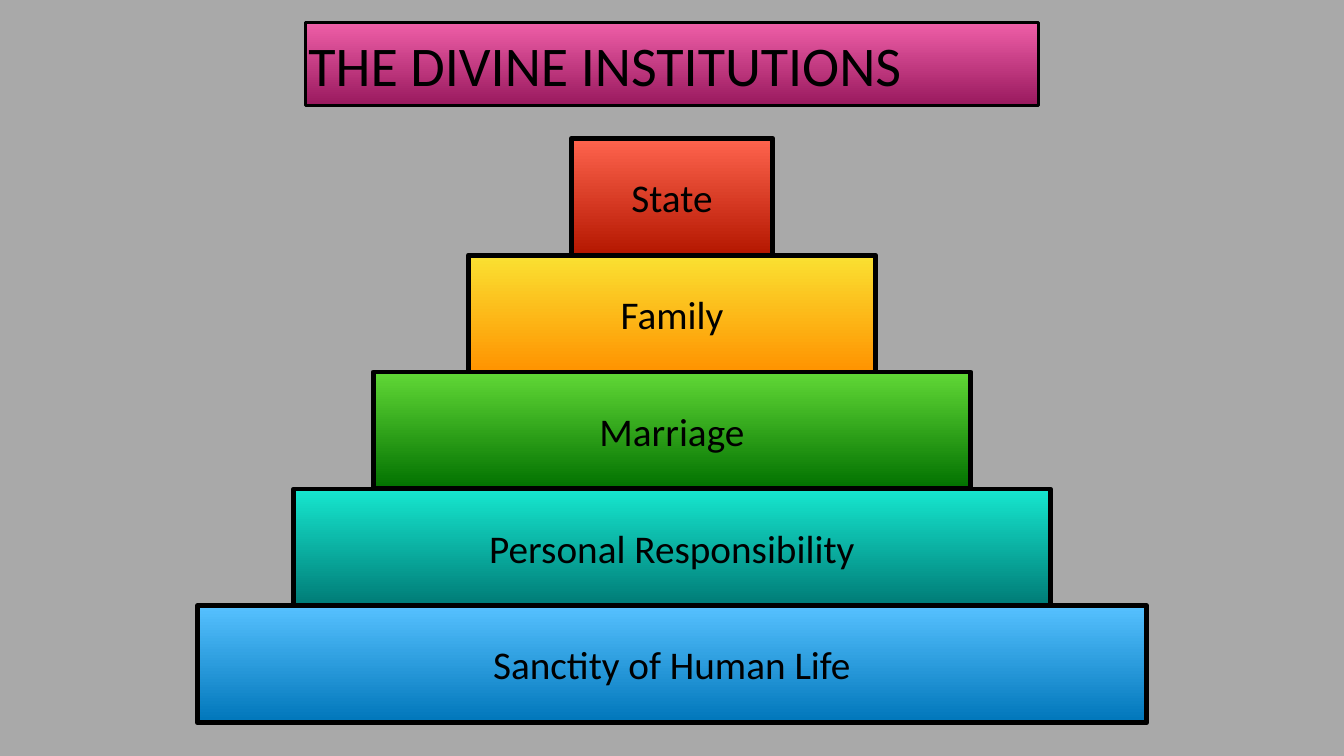
from pptx import Presentation
from pptx.dml.color import RGBColor
from pptx.enum.shapes import MSO_SHAPE
from pptx.enum.text import MSO_ANCHOR, MSO_AUTO_SIZE, PP_ALIGN
from pptx.util import Pt

COLORS = {
    "background": "A9A9A9",
    "ink": "000000",
    "title": ("EF5FA8", "99195E"),
    "blue": ("56C1FF", "0076BA"),
    "teal": ("16E7CF", "007B76"),
    "green": ("61D836", "017100"),
    "yellow": ("FAE132", "FF9300"),
    "red": ("FF644E", "B41700"),
}
SLIDE_WIDTH, SLIDE_HEIGHT = 1920, 1080
CENTER = SLIDE_WIDTH / 2
STEP_HEIGHT = 167
LABEL_HEIGHT = 93
BASE_TOP = 865.5

# Text, colour, step width and label width, from the base up
STEPS = [
    ("Sanctity of Human Life", "blue", 1356, 772),
    ("Personal Responsibility", "teal", 1081, 798),
    ("Marriage", "green", 854, 315),
    ("Family", "yellow", 582, 233),
    ("State", "red", 288, 191),
]


class SlideBuilder:
    font = "Calibri"
    inset = 4
    space_before = 33

    def __init__(self, slide):
        self.slide = slide
        self.pyramid = slide.shapes.add_group_shape()

    def background(self, color):
        fill = self.slide.background.fill
        fill.solid()
        fill.fore_color.rgb = RGBColor.from_string(color)

    def paint(self, shape, gradient, line_width):
        shape.fill.gradient()
        shape.fill.gradient_angle = 270
        for stop, color in zip(shape.fill.gradient_stops, gradient):
            stop.color.rgb = RGBColor.from_string(color)
        shape.line.color.rgb = RGBColor.from_string(COLORS["ink"])
        shape.line.width = Pt(line_width)

    def set_text(self, shape, text, size, alignment):
        frame = shape.text_frame
        frame.text = text
        frame.word_wrap = True
        frame.auto_size = MSO_AUTO_SIZE.NONE
        frame.vertical_anchor = MSO_ANCHOR.MIDDLE
        frame.margin_left = frame.margin_right = Pt(self.inset)
        frame.margin_top = frame.margin_bottom = Pt(self.inset)
        paragraph = frame.paragraphs[0]
        paragraph.alignment = alignment
        paragraph.space_before = Pt(self.space_before)
        paragraph.font.name = self.font
        paragraph.font.size = Pt(size)
        paragraph.font.color.rgb = RGBColor.from_string(COLORS["ink"])

    def title(self, text, left, top, width, height):
        shape = self.slide.shapes.title
        shape.left, shape.top = Pt(left), Pt(top)
        shape.width, shape.height = Pt(width), Pt(height)
        self.paint(shape, COLORS["title"], 4)
        self.set_text(shape, text, 80, PP_ALIGN.LEFT)

    def step(self, color, top, width):
        shape = self.pyramid.shapes.add_shape(
            MSO_SHAPE.RECTANGLE,
            Pt(CENTER - width / 2), Pt(top), Pt(width), Pt(STEP_HEIGHT))
        shape.shadow.inherit = False
        self.paint(shape, COLORS[color], 7)

    def label(self, text, top, width):
        shape = self.pyramid.shapes.add_textbox(
            Pt(CENTER - width / 2), Pt(top), Pt(width), Pt(LABEL_HEIGHT))
        self.set_text(shape, text, 56, PP_ALIGN.CENTER)


def main():
    presentation = Presentation()
    presentation.slide_width = Pt(SLIDE_WIDTH)
    presentation.slide_height = Pt(SLIDE_HEIGHT)
    title_only = presentation.slide_layouts[5]
    builder = SlideBuilder(presentation.slides.add_slide(title_only))

    builder.background(COLORS["background"])
    builder.title("THE DIVINE INSTITUTIONS", 436.5, 32.5, 1047, 118)
    for level, (text, color, step_width, label_width) in enumerate(STEPS):
        top = BASE_TOP - level * STEP_HEIGHT
        builder.step(color, top, step_width)
        builder.label(text, top + (STEP_HEIGHT - LABEL_HEIGHT) / 2, label_width)

    presentation.save("out.pptx")


if __name__ == "__main__":
    main()
